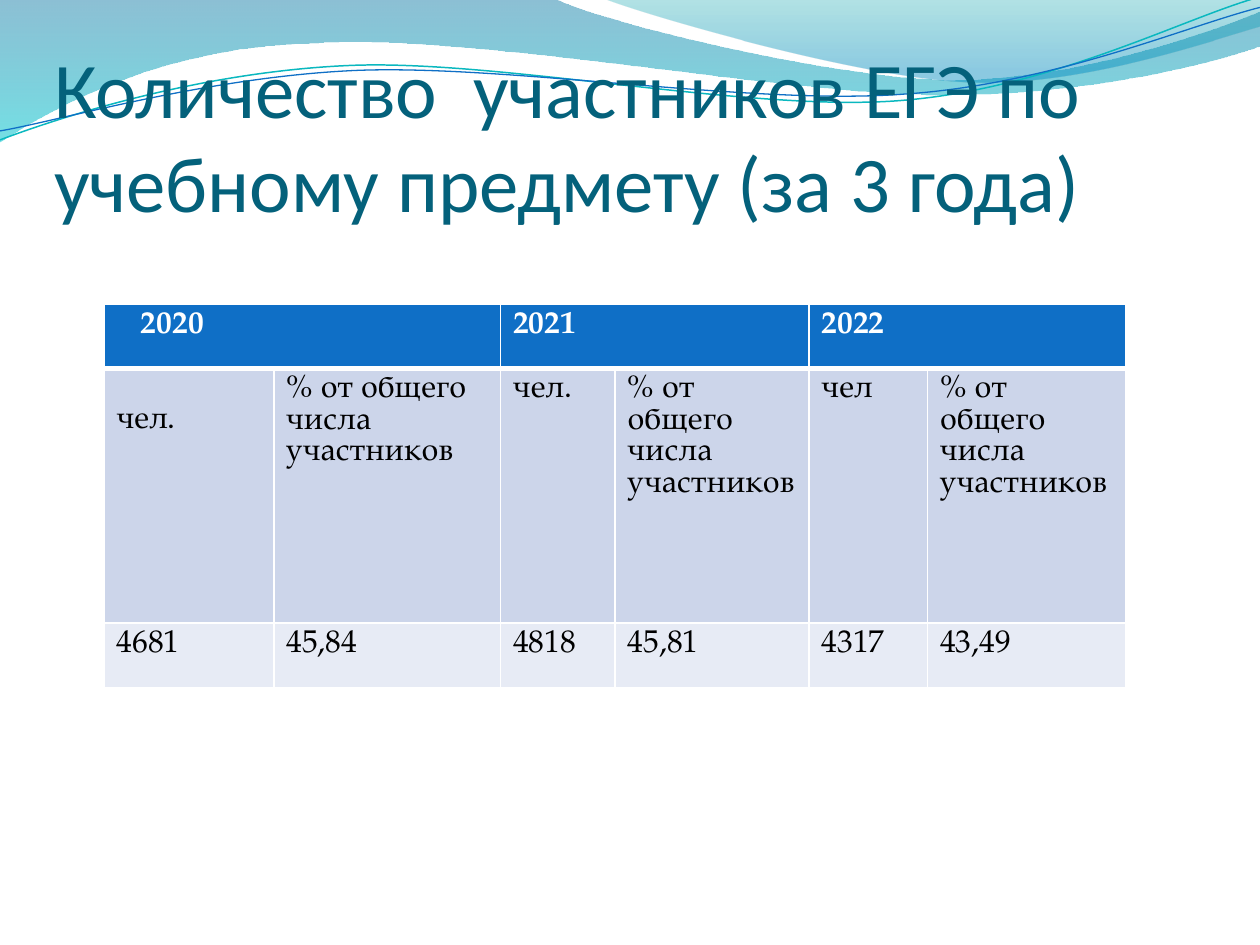
"""Build a slide with a wave banner, a title and a table of exam participants."""
from math import cos, radians, sin
from lxml.etree import SubElement, fromstring
from pptx import Presentation
from pptx.dml.color import RGBColor
from pptx.enum.text import MSO_ANCHOR
from pptx.oxml.ns import nsdecls, qn
from pptx.util import Cm, Pt

WHITE = RGBColor(0xFF, 0xFF, 0xFF)
BLACK = RGBColor(0x00, 0x00, 0x00)
TEAL = RGBColor(0x04, 0x61, 0x7B)
BLUE = RGBColor(0x0F, 0x6F, 0xC6)
AQUA = RGBColor(0x0A, 0xB8, 0xBF)
DEEP = RGBColor(0x00, 0x74, 0xA1)
CYAN = RGBColor(0x00, 0xC6, 0xCF)
GREEN = RGBColor(0x00, 0xA1, 0xA9)
SKY = RGBColor(0x00, 0x8B, 0xBF)
MID = RGBColor(0xCC, 0xD5, 0xEA)
PALE = RGBColor(0xE7, 0xEB, 0xF5)


def write(frame, text, font="TeX Gyre Pagella", size=18, color=BLACK, bold=False, pitch=None):
    line = frame.paragraphs[0]
    line.line_spacing = pitch
    run = line.add_run()
    run.text = text
    run.font.name = font
    run.font.size = Pt(size)
    run.font.color.rgb = color
    run.font.bold = bold


def trace(slide, steps, close, mid=(0, 0), tilt=0):
    turn = radians(tilt)
    flat = [v for step in steps for v in step]
    pts = []
    for x, y in zip(flat[::2], flat[1::2]):
        dx, dy = x - mid[0], y - mid[1]
        pts.append((Cm(mid[0] + dx * cos(turn) - dy * sin(turn)),
                    Cm(mid[1] + dx * sin(turn) + dy * cos(turn))))
    pen = slide.shapes.build_freeform(*pts[0])
    pen.add_line_segments(pts[1:], close=close)
    shape = pen.convert_to_shape()
    shape.shadow.inherit = False
    shape.rotation = -tilt % 360
    legs = iter(list(shape.element.iter(qn("a:lnTo"))))
    for step in steps[1:]:
        group = [next(legs) for _ in step[::2]]
        if len(group) == 3:
            curve = fromstring(f'<a:cubicBezTo {nsdecls("a")}/>')
            group[0].addprevious(curve)
            for leg in group:
                curve.append(leg[0])
                leg.getparent().remove(leg)
    return shape


deck = Presentation()
deck.slide_width, deck.slide_height = Cm(25.4), Cm(19.05)
slide = deck.slides.add_slide(deck.slide_layouts[6])

bands = [
    ([(0, 0), (11.18, -0.03), (12.09, 0.43, 16.87, 1.6, 19.25, 1.6),
      (21.67, 1.6, 24.33, 0.66, 25.4, 0.23), (25.43, 0.91),
      (24.97, 1.12, 22.1, 1.93, 18.95, 1.91), (15.8, 1.91, 9.7, 0.71, 6.53, 0.86),
      (3.28, 0.91, 1.17, 2.11, -0.03, 2.87), (0, 0)],
     [(0, DEEP, 45), (1, CYAN, 55)]),
    ([(12.17, -0.03), (12.93, 0.28, 17.32, 1.57, 19.53, 1.65),
      (21.74, 1.75, 24.41, 0.81, 25.4, 0.53), (25.4, 0), (12.17, -0.03)],
     [(0, GREEN, 30), (0.8, SKY, 45)]),
]
for steps, stops in bands:
    band = trace(slide, steps, True)
    band.line.fill.background()
    band.fill.gradient()
    band.fill.gradient_angle = 270
    for stop, (place, color, alpha) in zip(band.fill.gradient_stops, stops):
        stop.position = place
        stop.color.rgb = color
    for node, (place, color, alpha) in zip(band.element.iter(qn("a:gs")), stops):
        SubElement(node[0], qn("a:alpha"), val=str(alpha * 1000))

waves = [
    ([(0, 2.82), (1.22, 2.36, 4.01, 1.45, 7.04, 1.32), (10.03, 1.19, 15.06, 2.26, 18.11, 2.03),
      (21.16, 1.8, 23.83, 0.38, 25.35, -0.05)], AQUA, 0.85, (12.67, 1.46)),
    ([(0, 2.64), (1.19, 2.44, 4.17, 1.55, 7.19, 1.42), (10.24, 1.3, 15.16, 2.13, 18.21, 1.9),
      (21.23, 1.7, 23.9, 0.53, 25.4, 0.15)], BLUE, 0.75, (12.69, 1.5)),
]
for steps, color, width, mid in waves:
    wave = trace(slide, steps, False, mid=mid, tilt=2.7)
    wave.fill.background()
    wave.line.color.rgb = color
    wave.line.width = Pt(width)

title = slide.shapes.add_textbox(Cm(1.09), Cm(0.94), Cm(23.04), Cm(5.59)).text_frame
title.word_wrap = True
title.vertical_anchor = MSO_ANCHOR.BOTTOM
title.margin_left = title.margin_right = title.margin_top = 0
title.margin_bottom = Cm(1.92)
write(title, "Количество  участников ЕГЭ по учебному предмету (за 3 года)",
      font="Calibri", size=45, color=TEAL)

share = "% от общего числа участников"
rows = [
    (1.3, BLUE, ["2020", "", "2021", "", "2022", ""]),
    (5.13, MID, ["чел.", share, "чел.", share, "чел", share]),
    (1.3, PALE, ["4681", "45,84", "4818", "45,81", "4317", "43,49"]),
]
cols = [3.42, 4.57, 2.31, 3.91, 2.39, 3.99]
grid = slide.shapes.add_table(3, 6, Cm(2.1), Cm(6.13), Cm(sum(cols)), Cm(7.73)).table
for col, width in zip(grid.columns, cols):
    col.width = Cm(width)
for r, (height, fill, texts) in enumerate(rows):
    grid.rows[r].height = Cm(height)
    for c, text in enumerate(texts):
        cell = grid.cell(r, c)
        cell.fill.solid()
        cell.fill.fore_color.rgb = fill
        if text:
            write(cell.text_frame, text, color=BLACK if r else WHITE, bold=r == 0, pitch=Pt(18))
        thick = {"L": 1, "R": 1, "T": 3 if r == 1 else 1, "B": 1 if r else 3}
        for i, (side, width) in enumerate(thick.items()):
            edge = fromstring(
                f'<a:ln{side} {nsdecls("a")} w="{Pt(width)}"><a:solidFill>'
                f'<a:srgbClr val="{WHITE}"/></a:solidFill></a:ln{side}>')
            cell._tc.tcPr.insert(i, edge)
for c in (0, 2, 4):
    grid.cell(0, c).merge(grid.cell(0, c + 1))
grid.cell(0, 0).margin_left = Cm(0.74)
grid.cell(1, 0).margin_top = Cm(0.76)

deck.save("out.pptx")
